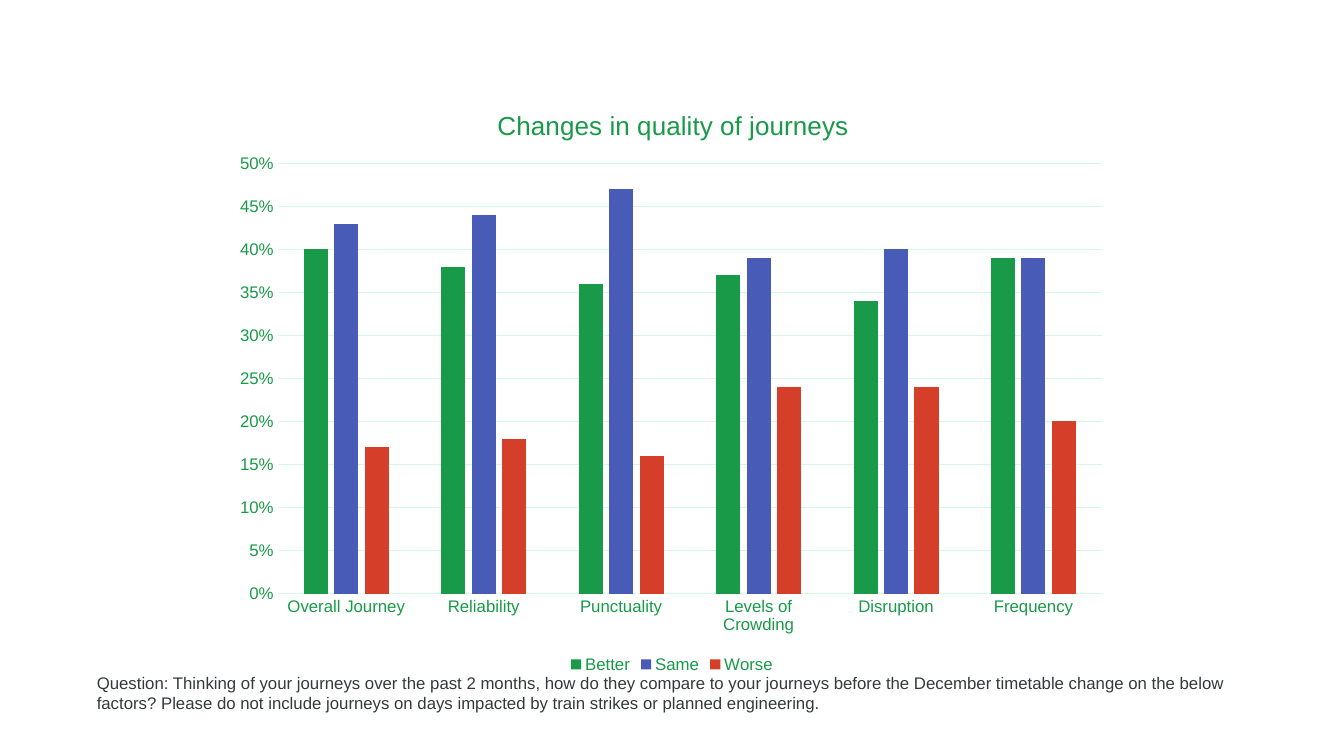
import pptx
import pptx.chart.data
import pptx.dml.color
import pptx.enum.chart
import pptx.enum.text
import pptx.oxml
import pptx.oxml.ns
import pptx.util
from pptx.util import Inches

THEME = {
    "font": "Arial",
    "green": "189A48",
    "blue": "485BB6",
    "red": "D53E29",
    "grid": "D4F8E1",
    "text": "36393C",
    "heading_size": 18.6,
    "text_size": 12,
}


def style_font(font, color, size):
    font.name = THEME["font"]
    font.size = pptx.util.Pt(size)
    font.bold = False
    font.color.rgb = pptx.dml.color.RGBColor.from_string(THEME[color])


def place(element, position, settings):
    for layout in element.findall(pptx.oxml.ns.qn("c:layout")):
        element.remove(layout)
    entries = "".join(f'<c:{name} val="{value}"/>' for name, value in settings)
    element.insert(position, pptx.oxml.parse_xml(
        f'<c:layout {pptx.oxml.ns.nsdecls("c")}>'
        f"<c:manualLayout>{entries}</c:manualLayout></c:layout>"))


deck = pptx.Presentation()
deck.slide_width = Inches(13.33)
deck.slide_height = Inches(7.5)
page = deck.slides.add_slide(deck.slide_layouts[1])
page.shapes.title.element.getparent().remove(page.shapes.title.element)

question = page.placeholders[1]
question.left, question.top = Inches(0.96), Inches(6.67)
question.width, question.height = Inches(11.73), Inches(0.49)
frame = question.text_frame
frame.text = (
    "Question: Thinking of your journeys over the past 2 months, how do they "
    "compare to your journeys before the December timetable change on the below "
    "factors? Please do not include journeys on days impacted by train strikes "
    "or planned engineering."
)
frame.margin_left = frame.margin_right = frame.margin_top = frame.margin_bottom = 0
frame.word_wrap = True
frame.auto_size = pptx.enum.text.MSO_AUTO_SIZE.NONE
frame.vertical_anchor = pptx.enum.text.MSO_ANCHOR.TOP
para = frame.paragraphs[0]
para.space_before = pptx.util.Pt(0)
properties = para._p.get_or_add_pPr()
properties.set("marL", "0")
properties.set("indent", "0")
properties.append(pptx.oxml.parse_xml(f'<a:buNone {pptx.oxml.ns.nsdecls("a")}/>'))
style_font(para.runs[0].font, "text", THEME["text_size"])

answers = [
    ("Better", "green", (0.40, 0.38, 0.36, 0.37, 0.34, 0.39)),
    ("Same", "blue", (0.43, 0.44, 0.47, 0.39, 0.40, 0.39)),
    ("Worse", "red", (0.17, 0.18, 0.16, 0.24, 0.24, 0.20)),
]
data = pptx.chart.data.CategoryChartData(number_format="0%")
data.categories = ["Overall Journey", "Reliability", "Punctuality",
                   "Levels of Crowding", "Disruption", "Frequency"]
for name, color, values in answers:
    data.add_series(name, values)
chart = page.shapes.add_chart(
    pptx.enum.chart.XL_CHART_TYPE.COLUMN_CLUSTERED,
    Inches(2.22), Inches(0.79), Inches(8.89), Inches(5.93), data).chart
style_font(chart.font, "green", THEME["text_size"])

chart.has_title = True
heading = chart.chart_title
heading.text_frame.text = "Changes in quality of journeys"
style_font(heading.text_frame.paragraphs[0].runs[0].font, "green", THEME["heading_size"])
heading.include_in_layout = False
place(heading._element, 1,
      [("xMode", "edge"), ("yMode", "edge"), ("x", 0.3), ("y", 0.04)])
place(chart._chartSpace.chart.plotArea, 0,
      [("layoutTarget", "inner"), ("xMode", "edge"), ("yMode", "edge"),
       ("x", 0.06), ("y", 0.14), ("w", 0.92), ("h", 0.72)])

chart.has_legend = True
chart.legend.position = pptx.enum.chart.XL_LEGEND_POSITION.BOTTOM
chart.legend.include_in_layout = False
style_font(chart.legend.font, "green", THEME["text_size"])

plot = chart.plots[0]
plot.gap_width = 219
plot.overlap = -27
plot.vary_by_categories = False
for series, (name, color, values) in zip(plot.series, answers):
    series.format.fill.solid()
    series.format.fill.fore_color.rgb = pptx.dml.color.RGBColor.from_string(THEME[color])
    series.invert_if_negative = False

for axis in (chart.category_axis, chart.value_axis):
    axis.major_tick_mark = pptx.enum.chart.XL_TICK_MARK.NONE
    axis.minor_tick_mark = pptx.enum.chart.XL_TICK_MARK.NONE
    style_font(axis.tick_labels.font, "green", THEME["text_size"])
scale = chart.value_axis
scale.minimum_scale, scale.maximum_scale, scale.major_unit = 0, 0.5, 0.05
scale.tick_labels.number_format = "0%"
scale.tick_labels.number_format_is_linked = False
scale.has_major_gridlines = True
scale.format.line.fill.background()
for line in (chart.category_axis.format.line, scale.major_gridlines.format.line):
    line.width = pptx.util.Pt(0.75)
    line.color.rgb = pptx.dml.color.RGBColor.from_string(THEME["grid"])

deck.save("out.pptx")
